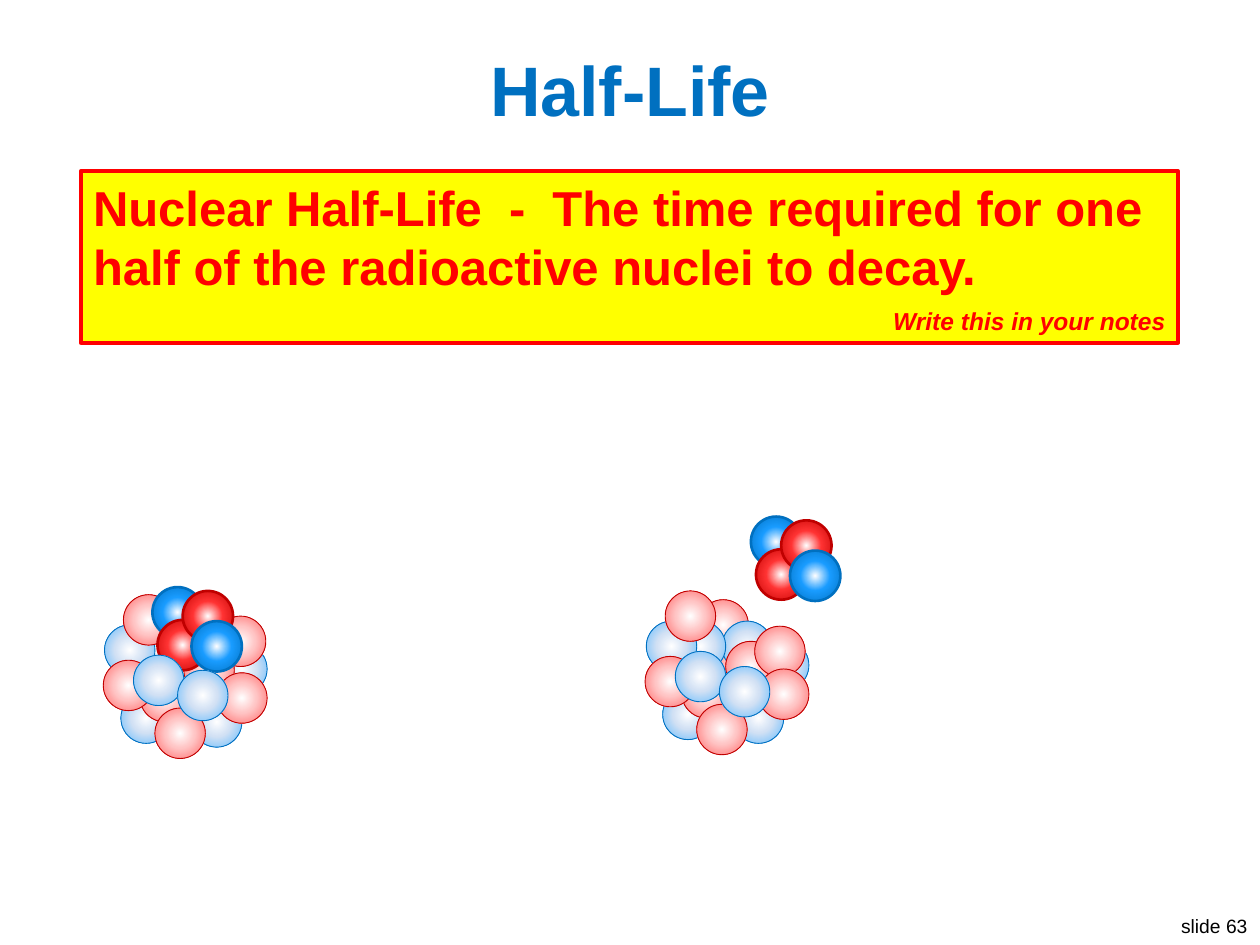
"""Build the Half-Life slide with a nucleus before and after alpha decay."""
from typing import NamedTuple

from pptx import Presentation
from pptx.dml.color import RGBColor
from pptx.enum.shapes import MSO_SHAPE
from pptx.enum.text import MSO_ANCHOR, PP_ALIGN
from pptx.oxml import parse_xml
from pptx.oxml.ns import nsdecls
from pptx.util import Emu, Pt

SCALE = 9144
SIZE = 40

BLACK = RGBColor(0x00, 0x00, 0x00)
WHITE = RGBColor(0xFF, 0xFF, 0xFF)
RED = RGBColor(0xFF, 0x00, 0x00)
YELLOW = RGBColor(0xFF, 0xFF, 0x00)
BLUE = RGBColor(0x00, 0x70, 0xC0)
CRIMSON = RGBColor(0xC0, 0x00, 0x00)
ICE = RGBColor(0xD2, 0xE1, 0xF4)
SKY = RGBColor(0x59, 0xB8, 0xFF)
BLUSH = RGBColor(0xFF, 0xC5, 0xC5)
CORAL = RGBColor(0xFF, 0x65, 0x65)
AZURE = RGBColor(0x19, 0x9C, 0xFF)
SCARLET = RGBColor(0xFF, 0x33, 0x33)


class Kind(NamedTuple):
    mid: RGBColor
    rim: RGBColor
    line: RGBColor
    width: float


class Ball(NamedTuple):
    kind: Kind
    x: int
    y: int


NEUTRON = Kind(ICE, SKY, BLUE, 0.5)
PROTON = Kind(BLUSH, CORAL, CRIMSON, 0.5)
BOLD_N = Kind(AZURE, BLUE, BLUE, 1.5)
BOLD_P = Kind(SCARLET, CRIMSON, CRIMSON, 1.5)


def balls(kind: Kind, *spots: tuple[int, int]) -> list[Ball]:
    """Make balls of one kind."""
    return [Ball(kind, x, y) for x, y in spots]


REAR = balls(NEUTRON, (24, 30), (90, 45), (70, 87), (14, 84), (1, 30))
INNER = balls(PROTON, (64, 46), (29, 67))
OUTER = balls(PROTON, (90, 68), (41, 96), (0, 58), (16, 6))
FRONT = balls(NEUTRON, (24, 54), (59, 66))
BARED = balls(PROTON, (42, 13), (56, 41)) + balls(NEUTRON, (61, 30))
ALPHA = [Ball(BOLD_N, 0, 0), Ball(BOLD_P, 4, 26),
         Ball(BOLD_P, 24, 3), Ball(BOLD_N, 31, 27)]


def px(*values: int) -> list[Emu]:
    """Turn pixels into EMU."""
    return [Emu(value * SCALE) for value in values]


def write(shape, text: str, *, size: int, color: RGBColor, bold: bool = False,
          italic: bool = False, align=PP_ALIGN.LEFT, before: int = 0,
          anchor=MSO_ANCHOR.TOP, wrap: bool = True) -> None:
    """Add one paragraph to a shape."""
    frame = shape.text_frame
    frame.word_wrap = wrap
    frame.vertical_anchor = anchor
    para = frame.add_paragraph() if frame.text else frame.paragraphs[0]
    para.alignment = align
    para.space_before = Pt(before)
    run = para.add_run()
    run.text = text
    font = run.font
    font.name, font.size = "Arial", Pt(size)
    font.bold, font.italic = bold, italic
    font.color.rgb = color


def shade(shape, kind: Kind) -> None:
    """Fill a shape with a radial gradient, white at its centre."""
    stops = "".join(
        f'<a:gs pos="{pos * 1000}"><a:srgbClr val="{color}"/></a:gs>'
        for pos, color in ((0, WHITE), (42, kind.mid), (100, kind.rim)))
    shape.fill.background()
    props = shape.element.spPr
    blank = props.find("{*}noFill")
    props.replace(blank, parse_xml(
        f'<a:gradFill {nsdecls("a")} rotWithShape="1"><a:gsLst>{stops}</a:gsLst>'
        '<a:path path="circle"><a:fillToRect l="50000" t="50000" r="50000" '
        'b="50000"/></a:path></a:gradFill>'))


def draw(group, items: list[Ball], left: int, top: int) -> None:
    """Draw balls from back to front, offset from a corner."""
    for ball in items:
        shape = group.shapes.add_shape(
            MSO_SHAPE.OVAL, *px(left + ball.x, top + ball.y, SIZE, SIZE))
        shape.shadow.inherit = False
        shade(shape, ball.kind)
        shape.line.color.rgb = ball.kind.line
        shape.line.width = Pt(ball.kind.width)


def shell(x: int, y: int) -> list[Ball]:
    """List the rear balls, with the one loose proton at the given spot."""
    return REAR + INNER + balls(PROTON, (x, y)) + OUTER


def main() -> None:
    """Build and save the slide."""
    deck = Presentation()
    deck.slide_width, deck.slide_height = px(1000, 750)
    shapes = deck.slides.add_slide(deck.slide_layouts[6]).shapes

    write(shapes.add_textbox(*px(925, 721, 75, 29)), "slide 63",
          size=11, color=BLACK, align=PP_ALIGN.RIGHT, wrap=False)
    write(shapes.add_textbox(*px(20, 30, 960, 80)), "Half-Life", size=40,
          color=BLUE, bold=True, align=PP_ALIGN.CENTER,
          anchor=MSO_ANCHOR.MIDDLE)

    panel = shapes.add_shape(MSO_SHAPE.RECTANGLE, *px(64, 136, 871, 136))
    panel.shadow.inherit = False
    panel.fill.solid()
    panel.fill.fore_color.rgb = YELLOW
    panel.line.color.rgb = RED
    panel.line.width = Pt(2.25)
    write(panel, "Nuclear Half-Life  -  The time required for one half of the "
          "radioactive nuclei to decay.", size=28, color=RED, bold=True)
    write(panel, "Write this in your notes", size=14, color=RED, bold=True,
          italic=True, align=PP_ALIGN.RIGHT, before=6)

    whole = shapes.add_group_shape()
    draw(whole, shell(89, 23), 82, 466)
    draw(whole, ALPHA, 121, 466)
    draw(whole, FRONT, 82, 466)

    split = shapes.add_group_shape()
    draw(split, BARED + shell(87, 34) + FRONT, 512, 463)
    draw(split, ALPHA, 596, 410)

    deck.save("out.pptx")


if __name__ == "__main__":
    main()
